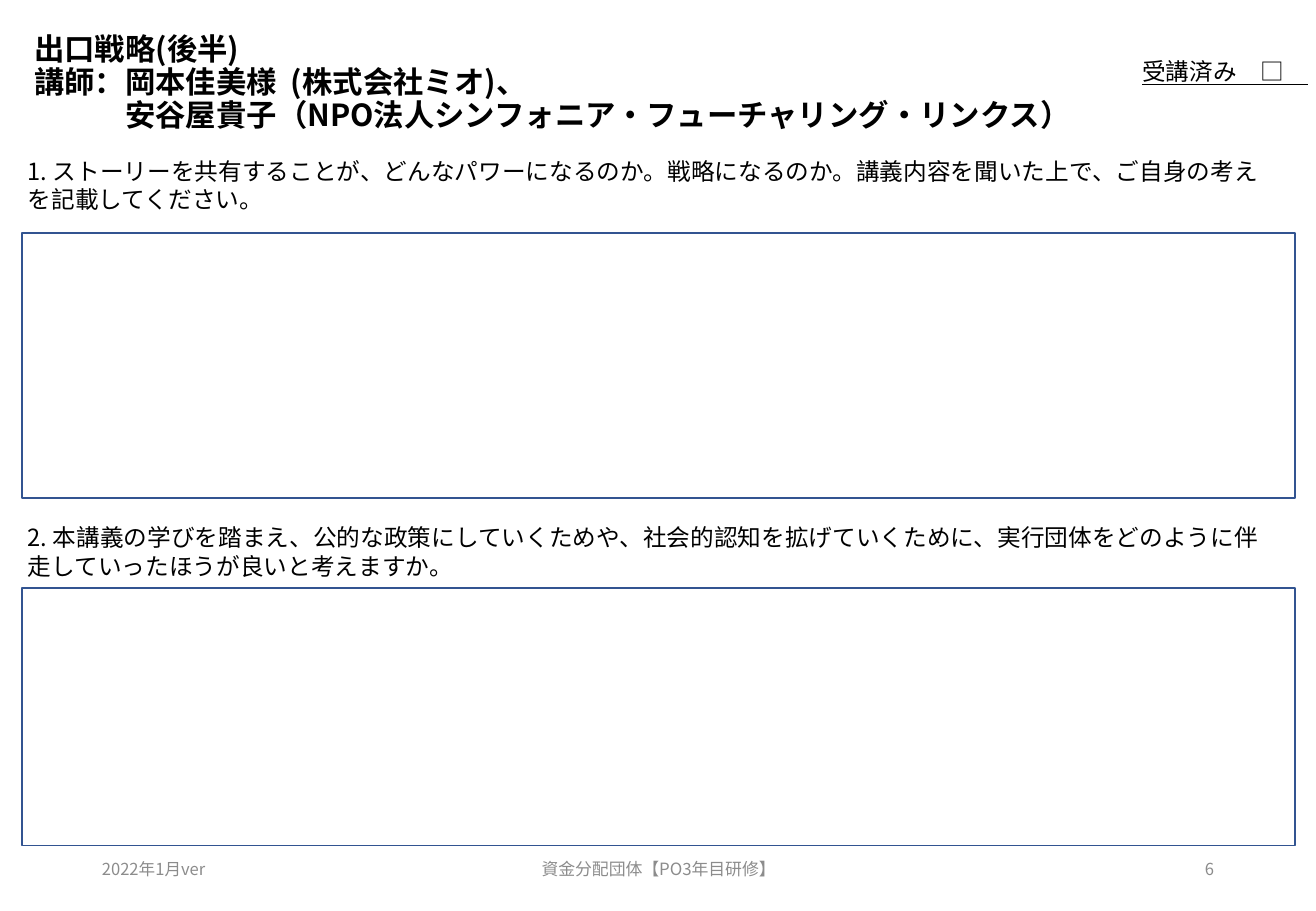
"""Build the worksheet slide for the second half of the exit strategy lecture."""
from dataclasses import dataclass

from lxml.etree import SubElement
from pptx import Presentation
from pptx.dml.color import RGBColor
from pptx.enum.shapes import MSO_SHAPE as Preset
from pptx.enum.text import MSO_ANCHOR as Anchor, MSO_AUTO_SIZE as AutoSize, PP_ALIGN as Align
from pptx.oxml.ns import qn
from pptx.slide import Slide
from pptx.text.text import TextFrame
from pptx.util import Inches, Pt

BLACK = RGBColor(0x00, 0x00, 0x00)
WHITE = RGBColor(0xFF, 0xFF, 0xFF)
GRAY = RGBColor(0x8C, 0x8C, 0x8C)
NAVY = RGBColor(0x32, 0x54, 0x91)
FONT = "Noto Sans CJK JP"
FOOTER_TOP, FOOTER_HEIGHT = 6.95, 0.4
ANSWER_LEFT, ANSWER_WIDTH = 0.18, 10.48


@dataclass(frozen=True)
class Box:
    left: float
    top: float
    width: float
    height: float

    def lengths(self) -> list[int]:
        return [Inches(n) for n in (self.left, self.top, self.width, self.height)]


@dataclass(frozen=True)
class Line:
    text: str
    indent: float = 0


@dataclass(frozen=True)
class Label:
    text: str
    box: Box
    size: float = 14
    color: RGBColor = BLACK
    align: Align = Align.LEFT
    anchor: Anchor = Anchor.TOP
    underline: bool = False


TITLE_BOX = Box(0.18, 0.15, 9.34, 1.08)
TITLE_LINES = [
    Line("出口戦略(後半)"),
    Line("講師：岡本佳美様  (株式会社ミオ)、"),
    Line("安谷屋貴子（NPO法人シンフォニア・フューチャリング・リンクス）", 0.75),
]
ANSWERS = [
    Box(ANSWER_LEFT, 1.92, ANSWER_WIDTH, 2.18),
    Box(ANSWER_LEFT, 4.84, ANSWER_WIDTH, 2.12),
]


def footer(text: str, left: float, width: float, size: float, align: Align) -> Label:
    box = Box(left, FOOTER_TOP, width, FOOTER_HEIGHT)
    return Label(text, box, size, GRAY, align, Anchor.MIDDLE)


LABELS = [
    Label("1. ストーリーを共有することが、どんなパワーになるのか。戦略になるのか。"
          "講義内容を聞いた上で、ご自身の考えを記載してください。",
          Box(0.13, 1.24, 10.39, 0.57)),
    Label("2. 本講義の学びを踏まえ、公的な政策にしていくためや、社会的認知を拡げていくために、"
          "実行団体をどのように伴走していったほうが良いと考えますか。",
          Box(0.13, 4.26, 10.48, 0.57)),
    Label("受講済み　□　", Box(9.3, 0.42, 2.01, 0.34), underline=True),
    footer("2022年1月ver", 0.74, 2.44, 9.8, Align.LEFT),
    footer("資金分配団体【PO3年目研修】", 3.59, 3.66, 10, Align.CENTER),
    footer("6", 7.65, 2.44, 9.8, Align.RIGHT),
]


def write_lines(frame: TextFrame, lines: list[Line], color: RGBColor,
                align: Align, spacing: float, formats: dict) -> None:
    for index, line in enumerate(lines):
        paragraph = frame.add_paragraph() if index else frame.paragraphs[0]
        paragraph.alignment = align
        paragraph.line_spacing = spacing
        if line.indent:
            paragraph._p.get_or_add_pPr().set("marL", str(Inches(line.indent)))
        run = paragraph.add_run()
        run.text = line.text
        for name, value in formats.items():
            setattr(run.font, name, value)
        run.font.color.rgb = color
        SubElement(run.font._element, qn("a:ea"), typeface=FONT)


def set_frame(frame: TextFrame, anchor: Anchor) -> None:
    formats = {"word_wrap": True, "auto_size": AutoSize.NONE, "vertical_anchor": anchor}
    for name, value in formats.items():
        setattr(frame, name, value)


def fill_title(slide: Slide) -> None:
    title = slide.shapes.title
    for name, value in zip(("left", "top", "width", "height"), TITLE_BOX.lengths()):
        setattr(title, name, value)
    set_frame(title.text_frame, Anchor.MIDDLE)
    formats = {"name": FONT, "size": Pt(18), "bold": True}
    write_lines(title.text_frame, TITLE_LINES, BLACK, Align.LEFT, 0.9, formats)


def add_answer(slide: Slide, box: Box) -> None:
    answer = slide.shapes.add_shape(Preset.RECTANGLE, *box.lengths())
    answer.shadow.inherit = False
    answer.fill.solid()
    answer.fill.fore_color.rgb = WHITE
    answer.line.color.rgb = NAVY
    answer.line.width = Pt(1)


def add_label(slide: Slide, label: Label) -> None:
    frame = slide.shapes.add_textbox(*label.box.lengths()).text_frame
    set_frame(frame, label.anchor)
    formats = {"name": FONT, "size": Pt(label.size), "underline": label.underline}
    write_lines(frame, [Line(label.text)], label.color, label.align, 1.0, formats)


def main() -> None:
    deck = Presentation()
    deck.slide_width, deck.slide_height = Inches(10.83), Inches(7.5)
    slide = deck.slides.add_slide(deck.slide_layouts.get_by_name("Title Only"))
    fill_title(slide)
    for box in ANSWERS:
        add_answer(slide, box)
    for label in LABELS:
        add_label(slide, label)
    deck.save("out.pptx")


if __name__ == "__main__":
    main()
